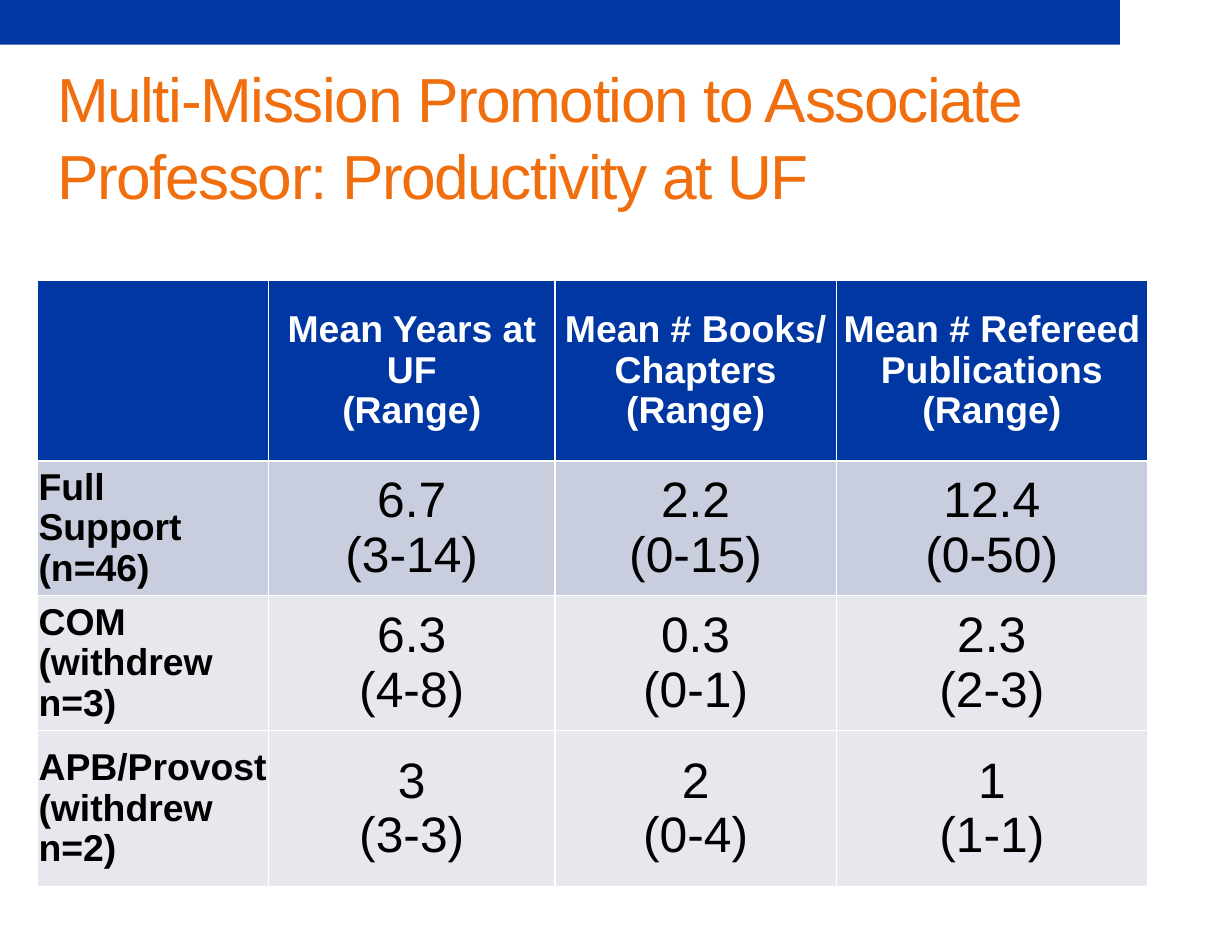
from lxml import etree
from pptx import Presentation
from pptx.dml.color import RGBColor
from pptx.enum import shapes, text
from pptx.oxml import ns
from pptx.util import Pt

BLUE = RGBColor(0x00, 0x37, 0xA2)
ORANGE = RGBColor(0xF0, 0x6E, 0x0D)
WHITE = RGBColor(0xFF, 0xFF, 0xFF)
BLACK = RGBColor(0x00, 0x00, 0x00)
BAND_DARK = RGBColor(0xC9, 0xCE, 0xDF)
BAND_LIGHT = RGBColor(0xE7, 0xE8, 0xEE)

FONT = "Arial"
COLUMN_WIDTHS = [148.5, 184.3, 180.7, 200.2]
ROW_HEIGHTS = [115.8, 86.8, 86.8, 100.1]
ROW_FILLS = [BLUE, BAND_DARK, BAND_LIGHT, BAND_LIGHT]
ROWS = [
    ["", "Mean Years at UF\v(Range)", "Mean # Books/\vChapters\v(Range)",
     "Mean # Refereed Publications\v(Range)"],
    ["Full\vSupport\v(n=46)", "6.7\v(3-14)", "2.2\v(0-15)", "12.4\v(0-50)"],
    ["COM\v(withdrew n=3)", "6.3\v(4-8)", "0.3\v(0-1)", "2.3\v(2-3)"],
    ["APB/Provost\v(withdrew n=2)", "3\n(3-3)", "2\n(0-4)", "1\n(1-1)"],
]


def format_runs(paragraph, size, color, bold=False):
    for run in paragraph.runs:
        run.font.name = FONT
        run.font.size = Pt(size)
        run.font.bold = bold
        run.font.color.rgb = color


def add_bar(slide):
    bar = slide.shapes.add_shape(
        shapes.MSO_SHAPE.RECTANGLE, Pt(0), Pt(0), Pt(720), Pt(28.8))
    bar.shadow.inherit = False
    bar.fill.solid()
    bar.fill.fore_color.rgb = BLUE
    bar.line.fill.background()


def add_title(slide, title):
    box = slide.shapes.add_textbox(Pt(36.7), Pt(36.7), Pt(720), Pt(97.9))
    frame = box.text_frame
    frame.word_wrap = True
    frame.margin_left = frame.margin_right = frame.margin_bottom = Pt(0)
    frame.margin_top = Pt(0.7)
    frame.text = title
    paragraph = frame.paragraphs[0]
    paragraph.space_before = Pt(4)
    paragraph.line_spacing = 1.03
    format_runs(paragraph, 40, ORANGE)
    for run in paragraph.runs:
        run.font._element.set("spc", "-90")


def set_borders(cell, widths):
    properties = cell._tc.get_or_add_tcPr()
    for index, (side, width) in enumerate(widths.items()):
        line = etree.Element(ns.qn(f"a:{side}"), w=str(Pt(width)))
        fill = etree.SubElement(line, ns.qn("a:solidFill"))
        etree.SubElement(fill, ns.qn("a:srgbClr"), val=str(WHITE))
        properties.insert(index, line)


def fill_cell(cell, content, row, column):
    header, label = row == 0, column == 0
    cell.fill.solid()
    cell.fill.fore_color.rgb = ROW_FILLS[row]
    cell.vertical_anchor = text.MSO_ANCHOR.MIDDLE
    cell.margin_left = cell.margin_right = cell.margin_top = Pt(0.7)
    cell.margin_bottom = Pt(0)
    set_borders(cell, {"lnL": 1, "lnR": 1, "lnT": 1.5 if row == 1 else 1,
                       "lnB": 1.5 if header else 1})
    cell.text_frame.text = content
    for paragraph in cell.text_frame.paragraphs:
        paragraph.alignment = text.PP_ALIGN.LEFT if label else text.PP_ALIGN.CENTER
        paragraph.line_spacing = 0.97
        format_runs(paragraph, 24 if header or label else 32,
                    WHITE if header else BLACK, header or label)


def add_productivity_table(slide):
    frame = slide.shapes.add_table(
        len(ROWS), len(COLUMN_WIDTHS), Pt(24.1), Pt(180.4),
        Pt(sum(COLUMN_WIDTHS)), Pt(sum(ROW_HEIGHTS)))
    table = frame.table
    for column, width in zip(table.columns, COLUMN_WIDTHS):
        column.width = Pt(width)
    for row, height in zip(table.rows, ROW_HEIGHTS):
        row.height = Pt(height)
    for row, contents in enumerate(ROWS):
        for column, content in enumerate(contents):
            fill_cell(table.cell(row, column), content, row, column)


def main():
    presentation = Presentation()
    presentation.slide_width = Pt(792)
    presentation.slide_height = Pt(612)
    slide = presentation.slides.add_slide(presentation.slide_layouts[6])
    add_bar(slide)
    add_title(slide, "Multi-Mission Promotion to Associate Professor: Productivity at UF")
    add_productivity_table(slide)
    presentation.save("out.pptx")


if __name__ == "__main__":
    main()
